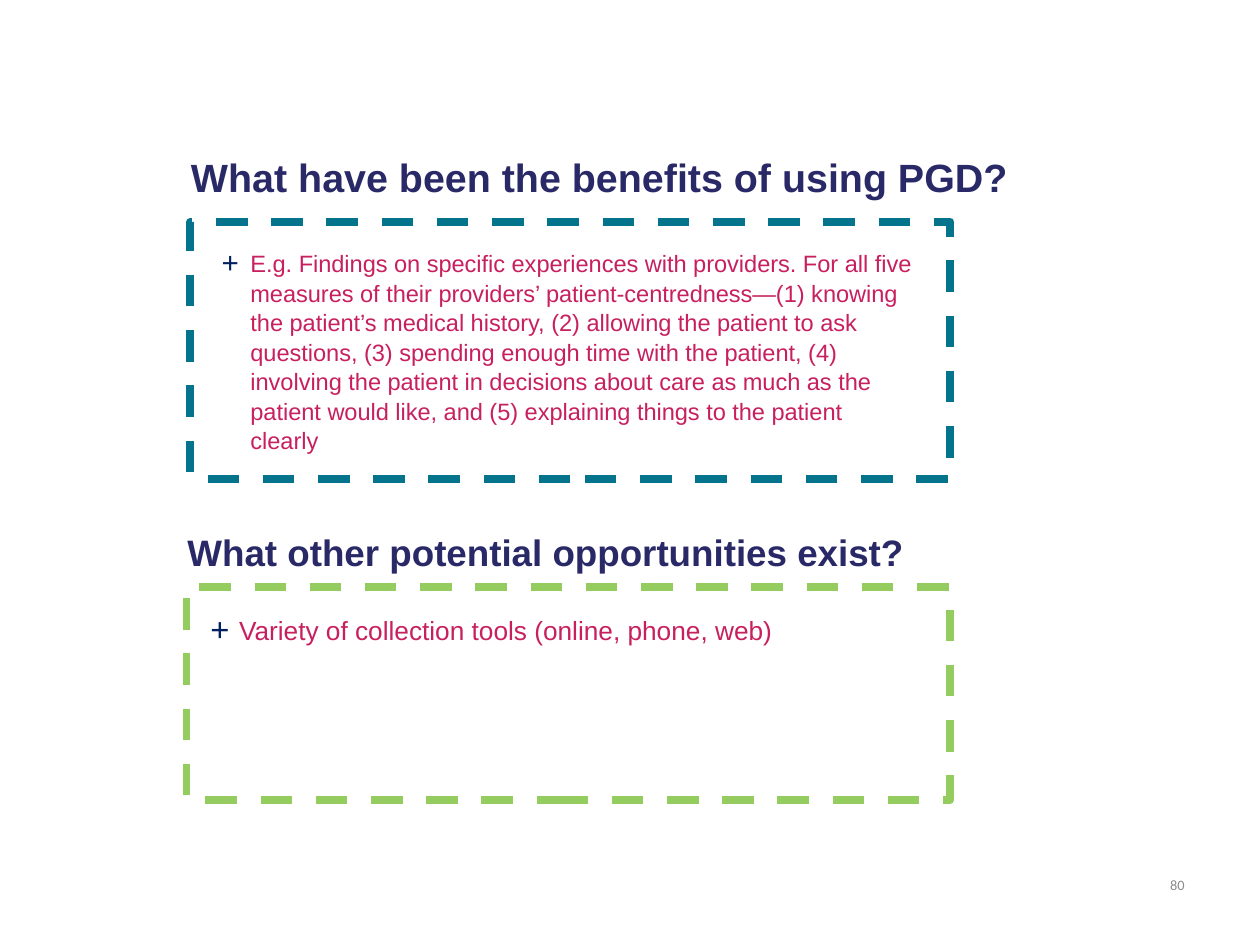
"""Build a slide with two headed, dashed panels on the benefits of PGD."""
from lxml import etree
from pptx import Presentation
from pptx import util as u
from pptx.dml.color import RGBColor
from pptx.enum import dml, shapes, text
from pptx.oxml.ns import qn

NAVY, PINK, BULLET, GREY = "2A2967", "C8205E", "002060", "8C8C8C"
INDENT = u.Cm(0.58)

SECTIONS = [
    {
        "heading": "What have been the benefits of using PGD?",
        "heading_at": (3.6, 2.67, 17.98, 1.8), "heading_size": 22.5, "inset": 0.25,
        "panel_at": (3.84, 4.47, 15.32, 5.18), "colour": "03748C",
        "point": "E.g. Findings on specific experiences with providers. For all five "
                 "measures of their providers’ patient-centredness—(1) knowing the "
                 "patient’s medical history, (2) allowing the patient to ask questions, "
                 "(3) spending enough time with the patient, (4) involving the patient "
                 "in decisions about care as much as the patient would like, and "
                 "(5) explaining things to the patient clearly",
        "point_at": (4.22, 4.88, 14.43, 5.89), "point_size": 13.5,
    },
    {
        "heading": "What other potential opportunities exist?",
        "heading_at": (3.6, 10.21, 15.04, 1.83), "heading_size": 21, "inset": 0.18,
        "panel_at": (3.76, 11.84, 15.39, 4.29), "colour": "94CC60",
        "point": "Variety of collection tools (online, phone, web)",
        "point_at": (3.99, 12.24, 14.3, 1.42), "point_size": 15,
    },
]
PAGE_NUMBER, PAGE_NUMBER_AT = "80", (22.71, 17.32, 1.42, 1.02)


def rgb(value):
    """Turn a hex string into a colour."""
    return RGBColor.from_string(value)


def place(at):
    """Turn a box in centimetres into lengths."""
    return [u.Cm(length) for length in at]


def add_bullet(para):
    """Give a paragraph a hanging plus sign."""
    props = para._p.get_or_add_pPr()
    props.set("marL", str(INDENT))
    props.set("indent", str(-INDENT))
    colour = etree.SubElement(props, qn("a:buClr"))
    etree.SubElement(colour, qn("a:srgbClr"), val=BULLET)
    etree.SubElement(props, qn("a:buSzPct"), val="125000")
    etree.SubElement(props, qn("a:buFont"), typeface="Arial")
    etree.SubElement(props, qn("a:buChar"), char="+")


def add_text(page, words, at, size, colour, font="Arial", bold=False, bullet=False,
             align=text.PP_ALIGN.LEFT, anchor=text.MSO_ANCHOR.MIDDLE,
             inset=0.25, spacing=None):
    """Add a wrapped text box with one formatted paragraph."""
    frame = page.shapes.add_textbox(*place(at)).text_frame
    frame.word_wrap = True
    frame.vertical_anchor = anchor
    frame.margin_left = frame.margin_right = u.Cm(inset)
    para = frame.paragraphs[0]
    para.alignment = align
    para.line_spacing = spacing
    if bullet:
        add_bullet(para)
    span = para.add_run()
    span.text = words
    span.font.name, span.font.size, span.font.bold = font, u.Pt(size), bold
    span.font.color.rgb = rgb(colour)


def add_panel(page, at, colour):
    """Add a white rectangle with a dashed outline."""
    panel = page.shapes.add_shape(shapes.MSO_SHAPE.RECTANGLE, *place(at))
    panel.shadow.inherit = False
    panel.fill.solid()
    panel.fill.fore_color.rgb = rgb("FFFFFF")
    panel.line.color.rgb = rgb(colour)
    panel.line.width = u.Pt(4.5)
    panel.line.dash_style = dml.MSO_LINE.DASH


def main():
    """Lay out both sections and the page number."""
    deck = Presentation()
    deck.slide_width, deck.slide_height = u.Cm(25.4), u.Cm(19.05)
    page = deck.slides.add_slide(deck.slide_layouts[6])
    for section in SECTIONS:
        add_text(page, section["heading"], section["heading_at"], section["heading_size"],
                 NAVY, bold=True, inset=section["inset"])
        add_panel(page, section["panel_at"], section["colour"])
        add_text(page, section["point"], section["point_at"], section["point_size"],
                 PINK, bullet=True, anchor=text.MSO_ANCHOR.TOP, spacing=1.04)
    add_text(page, PAGE_NUMBER, PAGE_NUMBER_AT, 8.2, GREY, font="Calibri",
             align=text.PP_ALIGN.RIGHT)
    deck.save("out.pptx")


if __name__ == "__main__":
    main()
